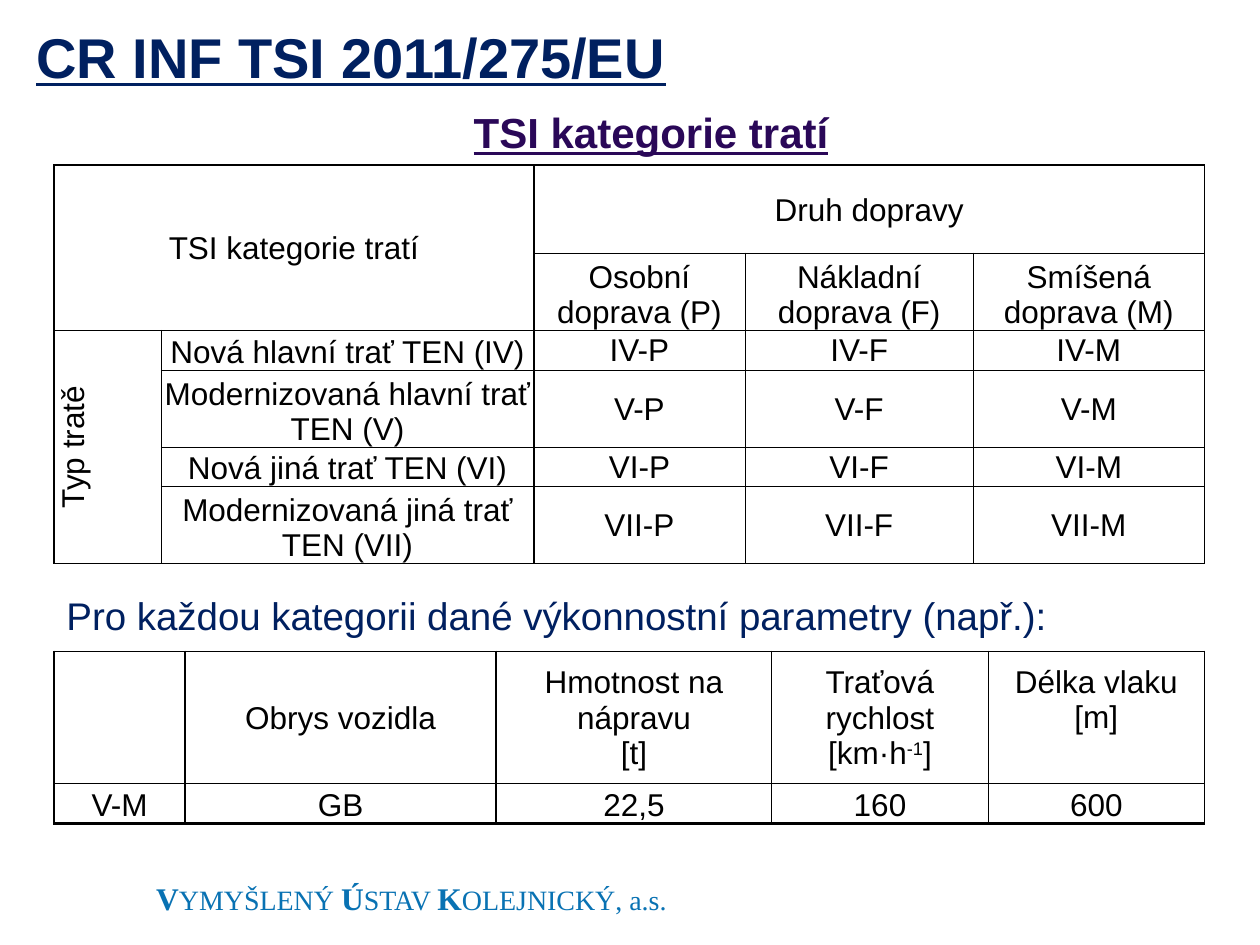
from lxml import etree
from pptx import Presentation
from pptx.dml.color import RGBColor
from pptx.enum import text
from pptx.oxml.ns import qn
from pptx.util import Cm, Pt

NAVY, PURPLE, BLUE, BLACK, WHITE = "002060", "2A0858", "0972B3", "000000", "FFFFFF"
TOP, MIDDLE, BOTTOM = (text.MSO_ANCHOR.TOP, text.MSO_ANCHOR.MIDDLE,
                       text.MSO_ANCHOR.BOTTOM)
LEFT, WIDTH = 1.09, 23.19

CATEGORIES = [
    ["TSI kategorie tratí", "", "Druh dopravy", "", ""],
    ["", "", "Osobní doprava (P)", "Nákladní doprava (F)", "Smíšená doprava (M)"],
]
LINE_TYPES = [
    ("Nová hlavní trať TEN", "IV"),
    ("Modernizovaná hlavní trať TEN", "V"),
    ("Nová jiná trať TEN", "VI"),
    ("Modernizovaná jiná trať TEN", "VII"),
]
PARAMETERS = [
    ["", "Obrys vozidla", "Hmotnost na nápravu\n[t]",
     "Traťová rychlost\n[km·h^-1^]", "Délka vlaku\n[m]"],
    ["V-M", "GB", "22,5", "160", "600"],
]


def color(value):
    return RGBColor.from_string(value)


def set_font(font, size, value, name="Arial", bold=False, underline=False):
    font.size, font.name, font.bold = Pt(size), name, bold
    font.underline = underline
    font.color.rgb = color(value)


def add_box(s, box):
    tf = s.shapes.add_textbox(*map(Cm, box)).text_frame
    tf.word_wrap = True
    return tf


def add_title(s, box):
    sp = s.shapes.title
    sp.left, sp.top, sp.width, sp.height = map(Cm, box)
    tf = sp.text_frame
    tf.text = "CR INF TSI 2011/275/EU"
    tf.vertical_anchor = TOP
    tf.auto_size = text.MSO_AUTO_SIZE.NONE
    p = tf.paragraphs[0]
    p.alignment = text.PP_ALIGN.LEFT
    set_font(p.font, 32, NAVY, bold=True, underline=True)


def add_subtitle(s, box):
    tf = add_box(s, box)
    tf.word_wrap = False
    p = tf.paragraphs[0]
    p.text = "TSI kategorie tratí"
    set_font(p.font, 24, PURPLE, bold=True, underline=True)


def add_lead_in(s, box):
    tf = add_box(s, box)
    p = tf.paragraphs[0]
    p.text = "Pro každou kategorii dané výkonnostní parametry (např.):"
    p.line_spacing = 1.1
    set_font(p.font, 22, NAVY)


def add_footer(s, box):
    tf = add_box(s, box)
    tf.margin_top = Cm(0.69)
    p = tf.paragraphs[0]
    for initial, rest in (("V", "YMYŠLENÝ "), ("Ú", "STAV "), ("K", "OLEJNICKÝ, a.s.")):
        for part, size, bold in ((initial, 18, True), (rest, 16, False)):
            r = p.add_run()
            r.text = part
            set_font(r.font, size, BLUE, "Times New Roman", bold)


def set_border(cell, side, width):
    ln = etree.SubElement(cell._tc.get_or_add_tcPr(), qn("a:ln" + side),
                          w=str(Pt(width)))
    fill = etree.SubElement(ln, qn("a:solidFill"))
    etree.SubElement(fill, qn("a:srgbClr"), val=BLACK)


def fill_cell(cell, value):
    """Write centred text; the parts between ^ marks are superscript."""
    cell.fill.solid()
    cell.fill.fore_color.rgb = color(WHITE)
    cell.margin_left = cell.margin_top = cell.margin_right = Cm(0.03)
    cell.margin_bottom = 0
    cell.vertical_anchor = MIDDLE
    p = cell.text_frame.paragraphs[0]
    first, *others = value.split("^")
    p.text = first
    p.alignment = text.PP_ALIGN.CENTER
    set_font(p.font, 18, BLACK)
    for i, part in enumerate(others):
        r = p.add_run()
        r.text = part
        if i % 2 == 0:
            r.font._element.set("baseline", "30000")


def add_grid(s, box, rows, widths, heights, row_lines, col_lines, merges=()):
    """Add a table; row_lines and col_lines are the widths of its rules."""
    table = s.shapes.add_table(len(heights), len(widths), *map(Cm, box)).table
    table.first_row = table.horz_banding = False
    for column, width in zip(table.columns, widths):
        column.width = Cm(width)
    for row, height in zip(table.rows, heights):
        row.height = Cm(height)
    for r1, c1, r2, c2 in merges:
        table.cell(r1, c1).merge(table.cell(r2, c2))
    for i, values in enumerate(rows):
        for j, value in enumerate(values):
            cell = table.cell(i, j)
            set_border(cell, "L", col_lines[j])
            set_border(cell, "R", col_lines[j + cell.span_width])
            set_border(cell, "T", row_lines[i])
            set_border(cell, "B", row_lines[i + cell.span_height])
            fill_cell(cell, value)
    return table


def add_categories(s, box):
    rows = CATEGORIES + [
        ["" if i else "Typ tratě", f"{name} ({code})"] + [f"{code}-{t}" for t in "PFM"]
        for i, (name, code) in enumerate(LINE_TYPES)]
    table = add_grid(s, box, rows, [2.16, 7.51, 4.26, 4.6, 4.66],
                     [1.78] + [1.55, 0.78] * 2 + [1.55],
                     [1, 1, 1, 0.5, 0.5, 0.5, 1], [1, 0.5, 1, 0.5, 0.5, 1],
                     [(0, 0, 1, 1), (0, 2, 0, 4), (2, 0, 5, 0)])
    table.cell(2, 0)._tc.get_or_add_tcPr().set("vert", "vert270")
    for j in (2, 3, 4):
        table.cell(1, j).vertical_anchor = BOTTOM
    for i in range(2, len(rows)):
        table.cell(i, 1).vertical_anchor = BOTTOM


def add_parameters(s, box):
    table = add_grid(s, box, PARAMETERS, [2.64, 6.27, 5.56, 4.36, 4.36],
                     [2.67, 0.78], [1, 0.5, 2], [1, 1, 1, 0.5, 0.5, 1])
    train_length = table.cell(0, 4)
    train_length.vertical_anchor = TOP
    train_length.margin_top = Cm(0.27)
    for j in range(len(table.columns)):
        table.cell(1, j).vertical_anchor = BOTTOM


def main():
    prs = Presentation()
    prs.slide_width, prs.slide_height = Cm(25.4), Cm(19.05)
    s = prs.slides.add_slide(prs.slide_layouts[5])
    add_footer(s, (2.9, 17.04, 11, 1.7))
    add_title(s, (0.48, 0.33, 23.42, 1.63))
    add_subtitle(s, (9.3, 2.03, 7.72, 1.27))
    add_categories(s, (LEFT, 3.33, WIDTH, 8))
    add_lead_in(s, (LEFT, 11.71, WIDTH, 1.22))
    add_parameters(s, (LEFT, 13.13, WIDTH, 3.45))
    prs.save("out.pptx")


if __name__ == "__main__":
    main()
